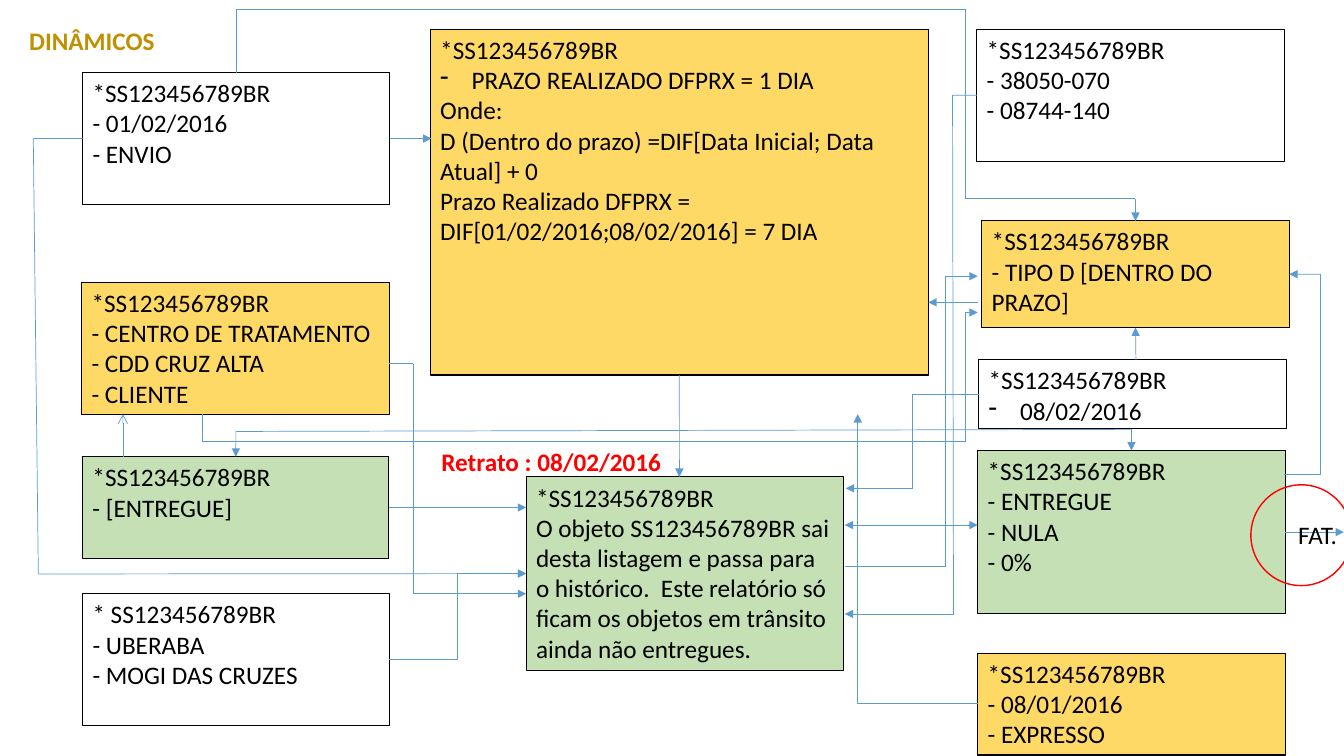
from lxml import etree
from pptx import Presentation
from pptx.dml.color import RGBColor
from pptx.enum.shapes import MSO_CONNECTOR, MSO_SHAPE
from pptx.enum.text import MSO_ANCHOR, MSO_AUTO_SIZE, PP_ALIGN
from pptx.oxml.ns import qn
from pptx.util import Pt

RECT, OVAL = MSO_SHAPE.RECTANGLE, MSO_SHAPE.OVAL
LINE, ELBOW = MSO_CONNECTOR.STRAIGHT, MSO_CONNECTOR.ELBOW
TOP, LEFT, NONE = MSO_ANCHOR.TOP, PP_ALIGN.LEFT, MSO_AUTO_SIZE.NONE
HEX = {"black": "000000", "gold": "FFD966", "green": "C5E0B4",
       "blue": "5B9BD5", "red": "FF0000", "head": "BF9000"}
RGB = {name: RGBColor.from_string(code) for name, code in HEX.items()}
CODE = "*SS123456789BR"


def write(shape, lines, color="black", bold=False):
    """Fill a shape with lines; a leading tab marks a dash bullet."""
    frame = shape.text_frame
    frame.word_wrap = True
    frame.auto_size = NONE
    frame.vertical_anchor = TOP
    for i, line in enumerate(lines):
        para = frame.add_paragraph() if i else frame.paragraphs[0]
        para.alignment = LEFT
        run = para.add_run()
        run.text = line.lstrip("\t")
        run.font.size = Pt(18)
        run.font.name = "Calibri"
        run.font.bold = bold
        run.font.color.rgb = RGB[color]
        if line.startswith("\t"):
            props = para._p.get_or_add_pPr()
            props.set("marL", str(Pt(22.5)))
            props.set("indent", str(-Pt(22.5)))
            etree.SubElement(props, qn("a:buFontTx"))
            etree.SubElement(props, qn("a:buChar")).set("char", "-")


def link(kind, start, end, head=None, tail=None):
    """Draw one thin blue connector with optional arrowheads."""
    wire = slide.shapes.add_connector(kind, *map(Pt, start + end))
    wire.line.color.rgb = RGB["blue"]
    wire.line.width = Pt(0.5)
    props = wire._element.spPr
    edge = props.find(qn("a:ln"))
    for tag, tip in (("a:headEnd", head), ("a:tailEnd", tail)):
        if tip:
            etree.SubElement(edge, qn(tag)).set("type", tip)
    etree.SubElement(props, qn("a:effectLst"))
    return wire


prs = Presentation()
prs.slide_width, prs.slide_height = Pt(960), Pt(540)
slide = prs.slides.add_slide(prs.slide_layouts[5])

# Title
title = slide.shapes.title
title.left, title.top, title.width, title.height = map(Pt, (13.7, 14.4, 105, 29))
write(title, ["DINÂMICOS"], "head", True)
title.text_frame.word_wrap = False
title.text_frame.margin_left = title.text_frame.margin_right = Pt(7.2)
title.text_frame.margin_top = title.text_frame.margin_bottom = Pt(3.6)

# Boxes: name, left, top, width, height, fill, lines
cards = [
    ("post", 59, 51.8, 219.6, 94.3, None, [CODE, "- 01/02/2016", "- ENVIO"]),
    ("route", 59, 424.1, 219.6, 94.3, None,
     ["* SS123456789BR", "- UBERABA", "- MOGI DAS CRUZES"]),
    ("express", 698.4, 466.6, 219.6, 72.7, "gold", [CODE, "- 08/01/2016", "- EXPRESSO"]),
    ("type", 701.3, 157.7, 219.6, 76.3, "gold", [CODE, "- TIPO D [DENTRO DO PRAZO]"]),
    ("term", 307.4, 20.9, 355.7, 247, "gold",
     [CODE, "\tPRAZO REALIZADO DFPRX = 1 DIA", "Onde:",
      "D (Dentro do prazo) =DIF[Data Inicial; Data Atual] + 0",
      "Prazo Realizado DFPRX = DIF[01/02/2016;08/02/2016] = 7 DIA"]),
    ("object", 375.8, 340.6, 226.8, 138.2, "green",
     [CODE, "O objeto SS123456789BR sai desta listagem e passa para o histórico.  "
      "Este relatório só ficam os objetos em trânsito ainda não entregues."]),
    ("done", 59, 326.2, 218.9, 72.7, "green", [CODE, "- [ENTREGUE]"]),
    ("state", 698.4, 321.8, 219.6, 116.6, "green",
     [CODE, "- ENTREGUE", "- NULA", "- 0%"]),
    ("today", 699.1, 257, 219.6, 49, None, [CODE, "\t08/02/2016"]),
    ("centre", 58.3, 201.6, 219.6, 94.3, "gold",
     [CODE, "- CENTRO DE TRATAMENTO", "- CDD CRUZ ALTA", "- CLIENTE"]),
    ("zip", 697.7, 20.9, 219.6, 94.3, None, [CODE, "- 38050-070", "- 08744-140"]),
]
boxes = {}
for name, x, y, w, h, fill, lines in cards:
    box = boxes[name] = slide.shapes.add_shape(RECT, *map(Pt, (x, y, w, h)))
    box.shadow.inherit = False
    if fill:
        box.fill.solid()
        box.fill.fore_color.rgb = RGB[fill]
    else:
        box.fill.background()
    box.line.color.rgb = RGB["black"]
    box.line.width = Pt(0.75)
    write(box, lines)

# Straight routes: points, head, tail, joined box and side at start and end
TRI = "triangle"
routes = [
    ([(278.6, 99), (308.2, 99)], None, TRI, ("post", 3), None),
    ([(698.4, 216), (663.1, 216)], None, TRI, None, None),
    ([(485.3, 267.9), (485.3, 340.6)], None, TRI, ("term", 2), None),
    ([(277.9, 362.5), (375.8, 362.5)], None, TRI, ("done", 3), None),
    ([(697.7, 68), (680.4, 68), (681.1, 438.5), (603.4, 438.5)],
     None, TRI, ("zip", 1), None),
    ([(59, 99), (23.8, 99), (27.4, 410), (375.8, 410)],
     None, TRI, ("post", 1), ("object", 1)),
    ([(603.4, 375.1), (698.4, 375.1)], TRI, TRI, None, None),
    ([(168.5, 326.2), (168.5, 308.2), (808.2, 306.7), (808.2, 321.8)],
     TRI, TRI, ("done", 0), ("state", 0)),
    ([(918, 380.1), (960, 380.1)], None, TRI, ("state", 3), None),
    ([(277.9, 259.9), (295.2, 259.9), (295.2, 424.1), (375.8, 424.1)],
     None, TRI, None, None),
    ([(168.8, 51.8), (168.8, 6.5), (689.8, 6.5), (689.8, 141.8), (811.1, 141.8),
      (811.1, 157.7)], None, TRI, ("post", 0), ("type", 0)),
    ([(811.4, 257), (811.1, 234)], None, TRI, None, ("type", 2)),
    ([(917.3, 339.1), (943.2, 339.1), (943.2, 195.9), (920.9, 195.9)],
     None, TRI, None, ("type", 3)),
    ([(144.7, 295.9), (144.7, 315.4), (689.8, 315.4), (689.8, 223.2), (698.4, 223.2)],
     None, TRI, None, None),
    ([(603.4, 404.6), (675.4, 404.6), (675.4, 197.3), (698.4, 197.3)],
     None, TRI, None, None),
    ([(87.8, 326.2), (87.8, 295.9)], None, "arrow", None, None),
]
for points, head, tail, first, last in routes:
    wires = []
    end = len(points) - 2
    for i, (a, b) in enumerate(zip(points, points[1:])):
        wires.append(link(LINE, a, b, None if i else head, tail if i == end else None))
    if first:
        wires[0].begin_connect(boxes[first[0]], first[1])
    if last:
        wires[-1].end_connect(boxes[last[0]], last[1])

# Elbow routes
for form, start, end in [
    ("bentConnector2", (698.4, 502.6), (612.7, 295.9)),
    ("bentConnector3", (277.9, 470.9), (375.8, 409.7)),
    ("bentConnector3", (699.1, 281.5), (604.1, 348.8)),
]:
    bend = link(ELBOW, start, end, None, TRI)
    bend._element.spPr.find(qn("a:prstGeom")).set("prst", form)

# Free labels and the red ring
for x, y, w, text, color, bold in [
    (308.2, 315.4, 194.4, "Retrato : 08/02/2016", "red", True),
    (920.2, 367.2, 51.8, "FAT.", "black", False),
]:
    note = slide.shapes.add_textbox(*map(Pt, (x, y, w, 29)))
    write(note, [text], color, bold)
ring = slide.shapes.add_shape(OVAL, *map(Pt, (893.5, 346.3, 72, 72)))
ring.shadow.inherit = False
ring.fill.background()
ring.line.color.rgb = RGB["red"]
ring.line.width = Pt(1)

prs.save("out.pptx")
